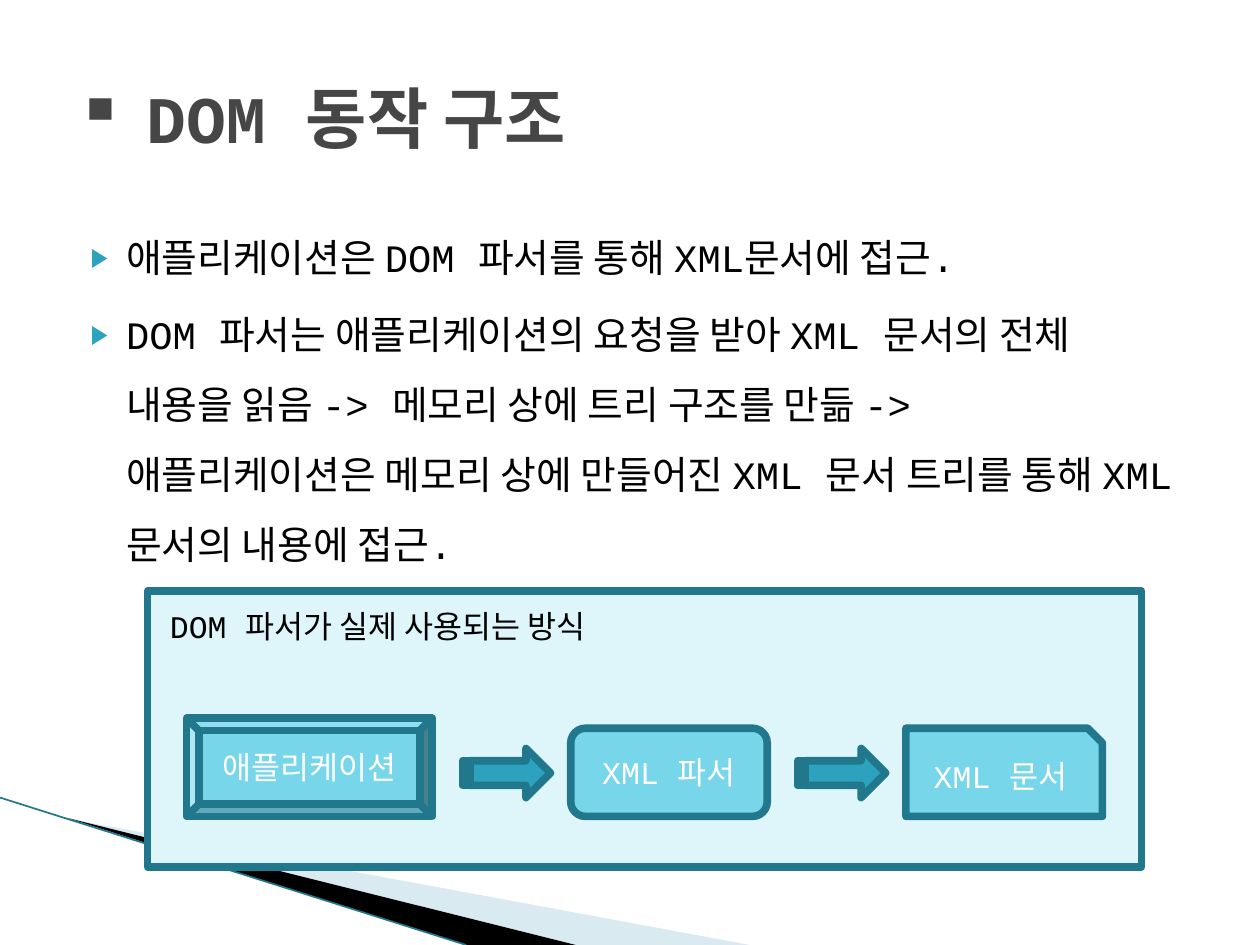
from lxml.etree import SubElement
from pptx import Presentation
from pptx.dml.color import RGBColor
from pptx.enum.shapes import MSO_CONNECTOR, MSO_SHAPE
from pptx.enum.text import MSO_ANCHOR, MSO_AUTO_SIZE, PP_ALIGN
from pptx.oxml.ns import qn
from pptx.util import Inches, Pt

FONT = "Courier New"
DARK, TEAL, AQUA, PALE = "21788D", "2DA2BF", "78D6EA", "DEF5FA"

TITLE = "DOM 동작 구조"
BODY = [
    "애플리케이션은 DOM 파서를 통해 XML문서에 접근.",
    "DOM 파서는 애플리케이션의 요청을 받아 XML 문서의 전체 내용을 읽음 -> "
    "메모리 상에 트리 구조를 만듦 -> 애플리케이션은 메모리 상에 만들어진 "
    "XML 문서 트리를 통해 XML 문서의 내용에 접근.",
]
CAPTION = "DOM 파서가 실제 사용되는 방식"
# preset, label, left, top, width, height
STEPS = [
    (MSO_SHAPE.BEVEL, "애플리케이션", 1.48, 5.7, 1.95, 0.78),
    (MSO_SHAPE.ROUNDED_RECTANGLE, "XML 파서", 4.53, 5.78, 1.56, 0.7),
    (MSO_SHAPE.SNIP_1_RECTANGLE, "XML 문서", 7.19, 5.78, 1.56, 0.7),
]
ARROW_W, ARROW_H, ARROW_TOP, ARROW_GAP = 0.7, 0.39, 5.94, 0.16
# fill, opacity in percent, corner points
WEDGES = [
    ("A0CBDC", 40, [(0.55, 6.5), (5.95, 7.5), (4.56, 7.5)]),
    ("000000", 100, [(0.53, 6.49), (4.57, 7.5), (3.7, 7.5)]),
]


def rgb(code):
    return RGBColor.from_string(code)


def box(*sizes):
    return [Inches(size) for size in sizes]


def write(para, text, size, color, bold=False):
    run = para.add_run()
    run.text = text
    font = run.font
    font.name, font.size, font.bold = FONT, Pt(size), bold
    font.color.rgb = rgb(color)


def bullet(para, char, left, color=None, scale=None):
    """Give the paragraph a hanging bullet; left and hang are in inches."""
    margin, hang = left
    props = para._p.get_or_add_pPr()
    props.set("marL", str(Inches(margin)))
    props.set("indent", str(-Inches(hang)))
    if color:
        SubElement(SubElement(props, qn("a:buClr")), qn("a:srgbClr"), val=color)
    if scale:
        SubElement(props, qn("a:buSzPct"), val=str(scale * 1000))
    SubElement(props, qn("a:buChar"), char=char)


def place(holder, *sizes):
    holder.left, holder.top, holder.width, holder.height = box(*sizes)
    holder.text_frame.auto_size = MSO_AUTO_SIZE.NONE
    return holder.text_frame


def add_wedge(shapes, fill, alpha, points):
    pen = shapes.build_freeform(*box(*points[0]), scale=1.0)
    pen.add_line_segments([box(*point) for point in points[1:]], close=True)
    wedge = pen.convert_to_shape()
    wedge.shadow.inherit = False
    wedge.fill.solid()
    wedge.fill.fore_color.rgb = rgb(fill)
    wedge.line.fill.background()
    if alpha < 100:
        tint = wedge._element.spPr.find(qn("a:solidFill"))[0]
        SubElement(tint, qn("a:alpha"), val=str(alpha * 1000))


def add_block(shapes, preset, fill, *sizes, label=None):
    block = shapes.add_shape(preset, *box(*sizes))
    block.shadow.inherit = False
    block.fill.solid()
    block.fill.fore_color.rgb = rgb(fill)
    block.line.color.rgb = rgb(DARK)
    block.line.width = Pt(4.33)
    if label:
        frame = block.text_frame
        frame.vertical_anchor = MSO_ANCHOR.MIDDLE
        para = frame.paragraphs[0]
        para.alignment = PP_ALIGN.CENTER
        write(para, label, 18, "FFFFFF")


def main():
    deck = Presentation()
    deck.slide_width, deck.slide_height = box(10, 7.5)
    slide = deck.slides.add_slide(deck.slide_layouts[1])
    shapes = slide.shapes

    for wedge in WEDGES:
        add_wedge(shapes, *wedge)
    edge = shapes.add_connector(MSO_CONNECTOR.STRAIGHT, *box(0, 6.33, 3.7, 7.5))
    edge.line.color.rgb = rgb(DARK)
    edge.line.width = Pt(0.95)
    SubElement(edge._element.spPr, qn("a:effectLst"))

    frame = place(shapes.title, 0.5, 0.3, 9, 1.25)
    frame.vertical_anchor = MSO_ANCHOR.MIDDLE
    para = frame.paragraphs[0]
    para.alignment = PP_ALIGN.LEFT
    bullet(para, "▪", (0.56, 0.56))
    write(para, TITLE, 38, "464646", bold=True)

    frame = place(slide.placeholders[1], 0.5, 1.62, 9, 2.91)
    for i, text in enumerate(BODY):
        para = frame.add_paragraph() if i else frame.paragraphs[0]
        para.line_spacing = 1.5
        para.space_before = Pt(4 if i else 0)
        bullet(para, "▶", (0.4, 0.28), TEAL, 68)
        write(para, text, 22.2, "000000")

    group = shapes.add_group_shape().shapes
    add_block(group, MSO_SHAPE.RECTANGLE, PALE, 1.17, 4.69, 7.89, 2.19)
    for preset, label, *sizes in STEPS:
        add_block(group, preset, AQUA, *sizes, label=label)
    for step in STEPS[1:]:
        left = step[2] - ARROW_GAP - ARROW_W
        add_block(group, MSO_SHAPE.STRIPED_RIGHT_ARROW, TEAL,
                  left, ARROW_TOP, ARROW_W, ARROW_H)

    frame = shapes.add_textbox(*box(1.25, 4.77, 7.66, 0.4)).text_frame
    frame.word_wrap = True
    write(frame.paragraphs[0], CAPTION, 18, "000000")

    deck.save("out.pptx")


if __name__ == "__main__":
    main()
